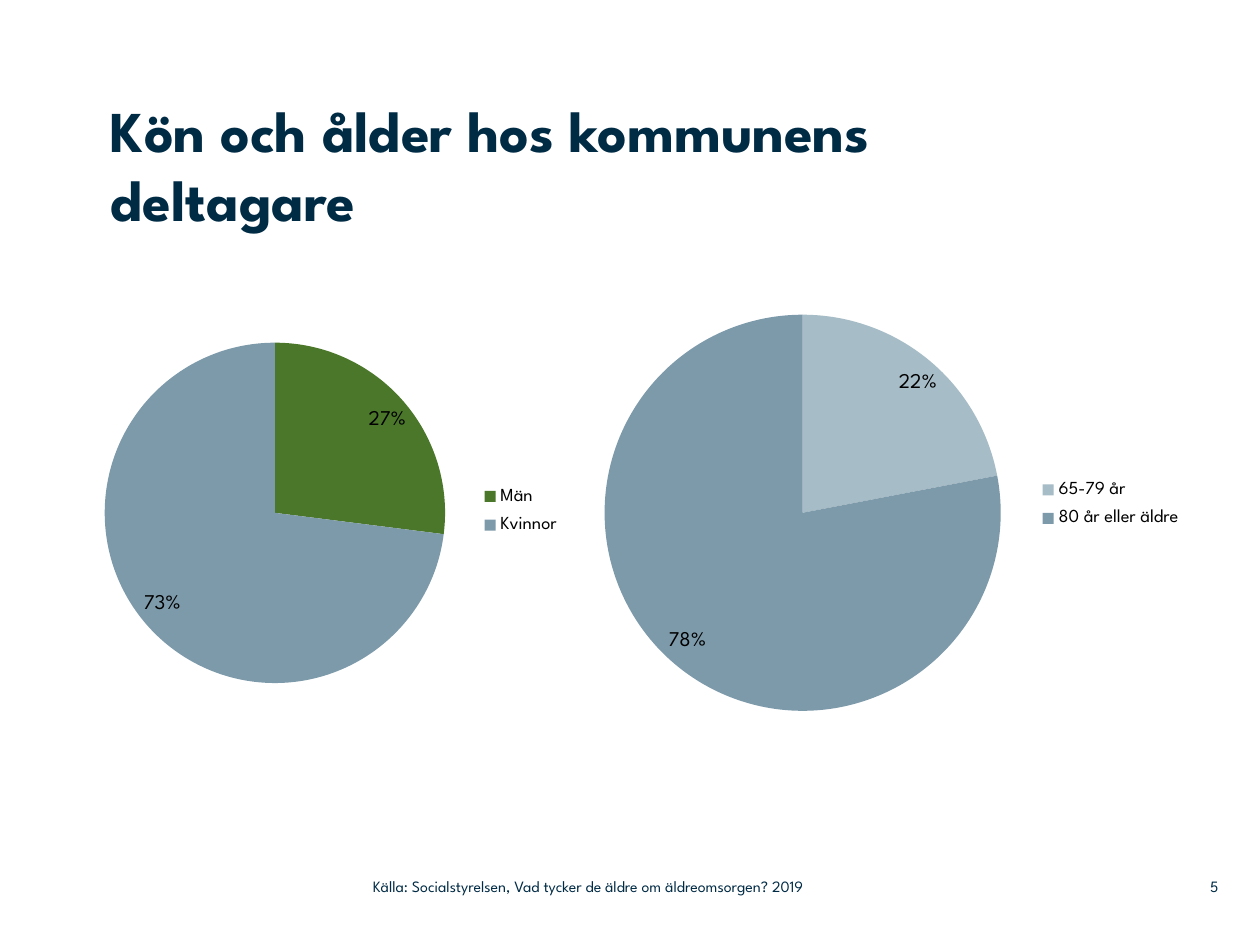
"""Build a slide with two pie charts of participants by sex and age."""
from dataclasses import dataclass

from lxml import etree
from pptx import Presentation
from pptx.chart.data import CategoryChartData
from pptx.dml.color import RGBColor
from pptx.enum.chart import XL_CHART_TYPE as ChartType
from pptx.enum.chart import XL_LABEL_POSITION as LabelPosition
from pptx.enum.chart import XL_LEGEND_POSITION as LegendPosition
from pptx.enum.text import MSO_ANCHOR as Anchor
from pptx.enum.text import PP_ALIGN as Align
from pptx.oxml.ns import qn
from pptx.util import Inches, Pt


@dataclass(frozen=True)
class Theme:
    font: str = "League Spartan"
    navy: str = "002B45"
    black: str = "000000"
    green: str = "4A7729"
    blue: str = "7D9AAA"
    light_blue: str = "A6BCC6"
    title_size: float = 33
    footer_size: float = 9
    chart_size: float = 10
    legend_size: float = 10.5
    label_size: float = 12


class SlideBuilder:
    def __init__(self, slide, theme):
        self.slide = slide
        self.theme = theme

    def style(self, font, size, color, bold=False):
        font.name = self.theme.font
        font.size = Pt(size)
        font.bold = bold
        font.color.rgb = RGBColor.from_string(color)

    def text(self, box, text, size, align=Align.LEFT, anchor=Anchor.MIDDLE, bold=False):
        shape = self.slide.shapes.add_textbox(*map(Inches, box))
        frame = shape.text_frame
        frame.word_wrap = True
        frame.vertical_anchor = anchor
        frame.margin_left = frame.margin_right = 0
        frame.margin_top = frame.margin_bottom = 0
        paragraph = frame.paragraphs[0]
        paragraph.text = text
        paragraph.alignment = align
        self.style(paragraph.font, size, self.theme.navy, bold)

    def pie(self, left, top, shares, legend_box, plot_box=None):
        theme = self.theme
        data = CategoryChartData()
        data.categories = [name for name, _, _ in shares]
        data.add_series("Series 1", [value for _, value, _ in shares])
        chart = self.slide.shapes.add_chart(
            ChartType.PIE, Inches(left), Inches(top), Inches(5.42), Inches(3.42), data).chart
        self.style(chart.font, theme.chart_size, theme.black)
        chart.has_title = False
        chart.has_legend = True
        chart.legend.position = LegendPosition.RIGHT
        chart.legend.include_in_layout = False
        self.style(chart.legend.font, theme.legend_size, theme.black)
        plot = chart.plots[0]
        plot.vary_by_categories = True
        for index, (_, _, color) in enumerate(shares):
            fill = plot.series[0].points[index].format.fill
            fill.solid()
            fill.fore_color.rgb = RGBColor.from_string(color)
        plot.has_data_labels = True
        labels = plot.data_labels
        labels.show_percentage = True
        labels.show_value = False
        labels.number_format = "0%"
        labels.number_format_is_linked = False
        labels.position = LabelPosition.BEST_FIT
        self.style(labels.font, theme.label_size, theme.black)
        self.place(chart, "legend", legend_box, 1)
        if plot_box:
            self.place(chart, "plotArea", plot_box, 0, [("layoutTarget", "inner")])

    def place(self, chart, part, box, layout_index, target=()):
        area = chart.element.find(".//" + qn(f"c:{part}"))
        layout = area.find(qn("c:layout"))
        if layout is None:
            layout = etree.Element(qn("c:layout"))
            area.insert(layout_index, layout)
        manual = etree.SubElement(layout, qn("c:manualLayout"))
        settings = [*target, ("xMode", "edge"), ("yMode", "edge"), *zip("xywh", box)]
        for tag, value in settings:
            etree.SubElement(manual, qn(f"c:{tag}")).set("val", str(value))


def main():
    presentation = Presentation()
    presentation.slide_width = Inches(10)
    presentation.slide_height = Inches(7.5)
    theme = Theme()
    slide = presentation.slides.add_slide(presentation.slide_layouts[6])
    builder = SlideBuilder(slide, theme)
    builder.text((9.2, 6.89, 0.47, 0.29), "5", theme.footer_size, align=Align.RIGHT)
    builder.text((2.96, 6.89, 4.43, 0.29),
                 "Källa: Socialstyrelsen, Vad tycker de äldre om äldreomsorgen? 2019",
                 theme.footer_size)
    builder.text((0.88, 0.75, 7.6, 1.42), "Kön och ålder hos kommunens deltagare",
                 theme.title_size, anchor=Anchor.TOP, bold=True)
    builder.pie(-0.23, 2.31, [("Män", 27, theme.green), ("Kvinnor", 73, theme.blue)],
                legend_box=(0.74, 0.43, 0.13, 0.16), plot_box=(0.19, 0.12, 0.51, 0.79))
    builder.pie(4.29, 2.36, [("65-79 år", 22, theme.light_blue),
                             ("80 år eller äldre", 78, theme.blue)],
                legend_box=(0.72, 0.4, 0.23, 0.16))
    presentation.save("out.pptx")


if __name__ == "__main__":
    main()
